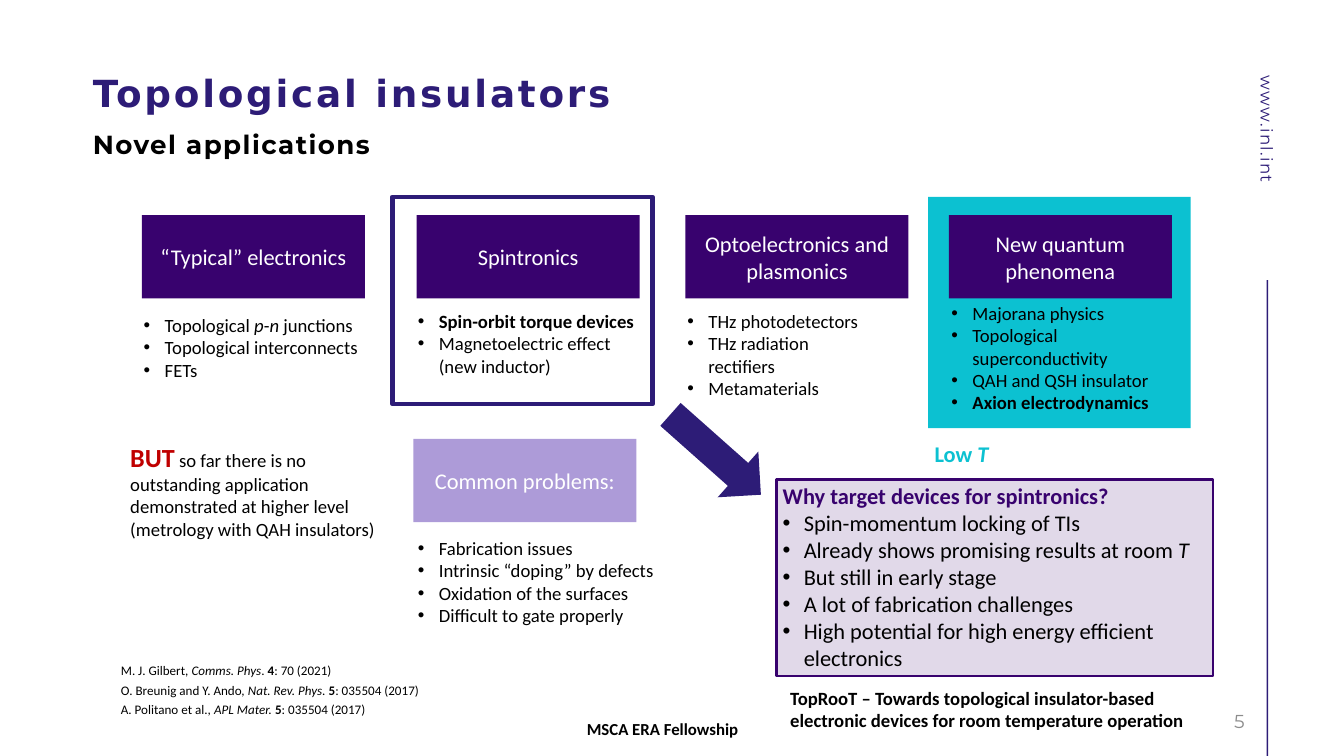
"""Build the slide on novel applications of topological insulators."""
from dataclasses import dataclass

from lxml import etree
from pptx import Presentation
from pptx.dml.color import RGBColor
from pptx.enum import shapes, text
from pptx.oxml import ns
from pptx.util import Pt


@dataclass(frozen=True)
class Theme:
    body: str = "Calibri"
    title: str = "DejaVu Sans"
    accent: str = "Montserrat"
    navy: str = "2D1C77"
    purple: str = "38026E"
    lilac: str = "AD9BD8"
    cyan: str = "0CC1D1"
    red: str = "C00000"
    grey: str = "8C8C8C"
    black: str = "000000"
    white: str = "FFFFFF"
    title_size: int = 40
    subtitle_size: int = 28
    heading_size: int = 24
    body_size: int = 20
    label_size: int = 18
    reference_size: int = 14


THEME = Theme()
ALIGN = text.PP_ALIGN
RECTANGLE = shapes.MSO_SHAPE.RECTANGLE
CARD_TOP, CARD_SIZE, INDENT = 230.4, (239, 89.3), 22.5

# A paragraph is a list of runs; a run is (words, style), style letters: b bold, i italic.
APPLICATIONS = [
    ("“Typical” electronics", 151.9, (146.9, 332.6, 257.8, 80), [
        [("Topological ", ""), ("p", "i"), ("-", ""), ("n", "i"), (" junctions", "")],
        [("Topological interconnects", "")],
        [("FETs", "")]]),
    ("Spintronics", 446.4, (440.6, 328.3, 257.8, 80), [
        [("Spin-orbit torque devices", "b")],
        [("Magnetoelectric effect (new inductor)", "")]]),
    ("Optoelectronics and plasmonics", 734.4, (729.4, 328.3, 207.4, 104.4), [
        [("THz photodetectors", "")],
        [("THz radiation rectifiers", "")],
        [("Metamaterials", "")]]),
    ("New quantum phenomena", 1016.6, (1012.3, 319.7, 270, 128.2), [
        [("Majorana physics", "")],
        [("Topological superconductivity", "")],
        [("QAH and QSH insulator", "")],
        [("Axion electrodynamics", "b")]]),
]
PROBLEMS = [[(words, "")] for words in (
    "Fabrication issues", "Intrinsic “doping” by defects",
    "Oxidation of the surfaces", "Difficult to gate properly")]
REASONS_HEADING = [("Why target devices for spintronics?", "b")]
REASONS = [
    [("Spin-momentum locking of TIs", "")],
    [("Already shows promising results at room ", ""), ("T", "i")],
    [("But still in early stage", "")],
    [("A lot of fabrication challenges", "")],
    [("High potential for high energy efficient electronics", "")],
]
CAVEAT = [("BUT", "b"), (" so far there is no outstanding application demonstrated "
                         "at higher level (metrology with QAH insulators)", "")]
REFERENCES = [
    [("M. J. Gilbert, ", ""), ("Comms. Phys", "i"), (". ", ""), ("4", "b"), (": 70 (2021)", "")],
    [("O. Breunig and Y. Ando, ", ""), ("Nat. Rev. Phys. ", "i"), ("5", "b"),
     (": 035504 (2017)", "")],
    [("A. Politano et al., ", ""), ("APL Mater. ", "i"), ("5", "b"), (": 035504 (2017)", "")],
]
PROJECT = ("TopRooT – Towards topological insulator-based electronic devices "
           "for room temperature operation")


def add_box(slide, place, fill=None, line=None, width=0, kind=RECTANGLE):
    shape = slide.shapes.add_shape(kind, *map(Pt, place))
    shape.shadow.inherit = False
    if fill:
        shape.fill.solid()
        shape.fill.fore_color.rgb = RGBColor.from_string(fill)
    else:
        shape.fill.background()
    if line:
        shape.line.color.rgb = RGBColor.from_string(line)
        shape.line.width = Pt(width)
    else:
        shape.line.fill.background()
    return shape


def add_bullet(paragraph):
    properties = paragraph._p.get_or_add_pPr()
    properties.set("marL", str(Pt(INDENT)))
    properties.set("indent", str(-Pt(INDENT)))
    etree.SubElement(properties, ns.qn("a:buFont")).set("typeface", "Arial")
    etree.SubElement(properties, ns.qn("a:buChar")).set("char", "•")


def write(shape, paragraphs, size=THEME.body_size, color=THEME.black, font=THEME.body,
          align=ALIGN.LEFT, bullets=False, middle=False, inset=True, spacing=0):
    frame = shape.text_frame
    frame.word_wrap = True
    frame.vertical_anchor = text.MSO_ANCHOR.MIDDLE if middle else text.MSO_ANCHOR.TOP
    if not inset:
        frame.margin_left = frame.margin_right = frame.margin_top = frame.margin_bottom = 0
    for index, runs in enumerate(paragraphs):
        paragraph = frame.add_paragraph() if index else frame.paragraphs[0]
        paragraph.alignment = align
        if bullets:
            add_bullet(paragraph)
        paragraph.font.name, paragraph.font.size = font, Pt(size)
        paragraph.font.color.rgb = RGBColor.from_string(color)
        for words, style in runs:
            run = paragraph.add_run()
            run.text = words
            run.font.name, run.font.size = font, Pt(size)
            run.font.color.rgb = RGBColor.from_string(color)
            run.font.bold, run.font.italic = "b" in style, "i" in style
            if spacing:
                run._r.get_or_add_rPr().set("spc", str(round(spacing * 100)))
    return frame


def add_text(slide, place, paragraphs, **options):
    shape = slide.shapes.add_textbox(*map(Pt, place))
    return shape, write(shape, paragraphs, **options)


def add_card(slide, left, top, words, fill):
    write(add_box(slide, (left, top, *CARD_SIZE), fill), [[(words, "")]],
          size=THEME.heading_size, color=THEME.white, align=ALIGN.CENTER, middle=True)


def add_frame(slide):
    add_box(slide, (1357.2, 300.2, 1.44, 509.8), THEME.navy)
    address, frame = add_text(slide, (1270.8, 158.4, 178.6, 24.5), [[("www.inl.int", "")]],
                              size=THEME.label_size, color=THEME.navy, font=THEME.accent,
                              inset=False, spacing=1.4)
    address.rotation = 90
    frame.paragraphs[0].line_spacing = Pt(25.2)
    for place, words, size, color, font, spacing in (
            ((99.4, 80.6, 1242, 65.5), "Topological insulators", THEME.title_size,
             THEME.navy, THEME.title, 3),
            ((99.4, 141.1, 1242, 34.6), "Novel applications", THEME.subtitle_size,
             THEME.black, THEME.accent, 1.6)):
        frame = add_text(slide, place, [[(words, "b")]], size=size, color=color, font=font,
                         inset=False, spacing=spacing)[1]
        frame.paragraphs[0].line_spacing = 0.9
    add_text(slide, (1016.6, 751, 324, 43.2), [[("5", "")]], color=THEME.grey,
             font=THEME.accent, align=ALIGN.RIGHT, middle=True)


def add_reasons(slide):
    callout = add_box(slide, (831.6, 513.4, 468, 211), THEME.purple, THEME.purple, 3)
    color = callout.fill._xPr.find(".//" + ns.qn("a:srgbClr"))
    etree.SubElement(color, ns.qn("a:alpha")).set("val", "15000")
    frame = write(callout, [REASONS_HEADING, *REASONS], size=THEME.heading_size)
    for paragraph in frame.paragraphs[1:]:
        add_bullet(paragraph)
    frame.paragraphs[0].runs[0].font.color.rgb = RGBColor.from_string(THEME.purple)


def main():
    presentation = Presentation()
    presentation.slide_width, presentation.slide_height = Pt(1440), Pt(810)
    slide = presentation.slides.add_slide(presentation.slide_layouts[6])
    add_box(slide, (994.3, 211, 281.5, 247.7), THEME.cyan)
    add_frame(slide)
    for name, left, place, points in APPLICATIONS:
        add_card(slide, left, CARD_TOP, name, THEME.purple)
        add_text(slide, place, points, bullets=True)
    for index, reference in enumerate(REFERENCES):
        add_text(slide, (122.4, 706.3 + 20.9 * index, 414.7, 24.5), [reference],
                 size=THEME.reference_size)
    add_text(slide, (440.6, 571.7, 296.6, 104.4), PROBLEMS, bullets=True)
    add_text(slide, (994.3, 468, 141.8, 36), [[("Low ", "b"), ("T", "bi")]],
             size=THEME.heading_size, color=THEME.cyan)
    add_reasons(slide)
    add_box(slide, (420.5, 211, 278.6, 221.8), line=THEME.navy, width=5)
    arrow = add_box(slide, (702, 454.3, 129.6, 65.5), THEME.navy,
                    kind=shapes.MSO_SHAPE.RIGHT_ARROW)
    arrow.rotation = 41.6
    add_card(slide, 442.8, 470.2, "Common problems:", THEME.lilac)
    caveat = add_text(slide, (132.5, 469.4, 278.6, 113.8), [CAVEAT])[1]
    warning = caveat.paragraphs[0].runs[0].font
    warning.size, warning.color.rgb = Pt(THEME.subtitle_size), RGBColor.from_string(THEME.red)
    add_text(slide, (839.5, 732.2, 468, 55.4), [[(PROJECT, "b")]])
    add_text(slide, (591.1, 766.1, 237.6, 28.8), [[("MSCA ERA Fellowship", "b")]],
             size=THEME.label_size, align=ALIGN.CENTER)
    presentation.save("out.pptx")


if __name__ == "__main__":
    main()
